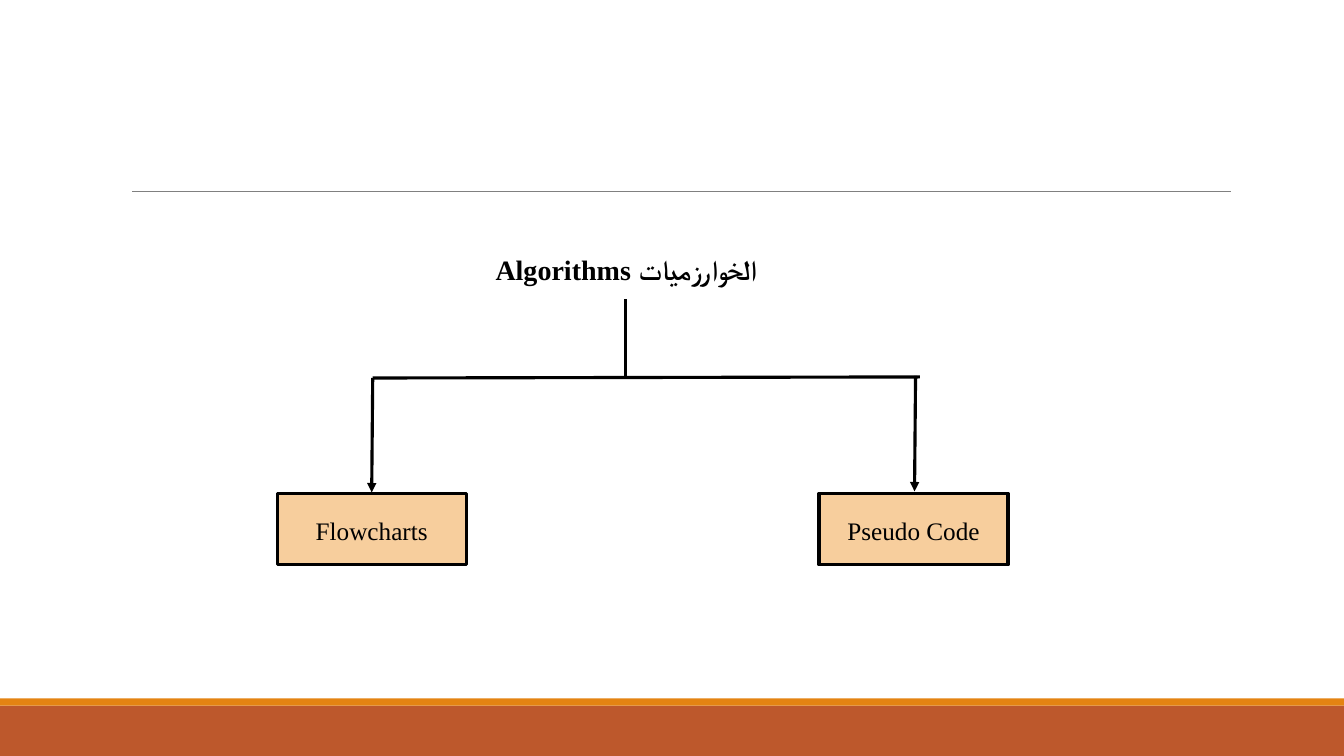
"""Build a slide with a tree that splits algorithms into flowcharts and pseudo code."""
import dataclasses

import lxml.etree
import pptx
import pptx.dml.color
import pptx.enum.shapes
import pptx.enum.text
import pptx.oxml.ns
import pptx.util

EMU_PER_PX = 9525
SLIDE_WIDTH, SLIDE_HEIGHT = 1280, 720
BLACK = "000000"
SERIF = "Times New Roman"


@dataclasses.dataclass(frozen=True)
class Box:
    left: int
    top: int
    width: int
    height: int
    fill: str
    line: str = ""
    text: str = ""


@dataclasses.dataclass(frozen=True)
class Line:
    start: tuple[int, int]
    end: tuple[int, int]
    color: str = BLACK
    weight: float = 2.25
    arrow: bool = False


BARS = [
    Box(0, 672, SLIDE_WIDTH, 48, "BD582C"),
    Box(0, 665, SLIDE_WIDTH, 7, "E48312"),
]
NODES = [
    Box(left, 470, 180, 68, "F7CE9D", BLACK, label)
    for left, label in ((780, "Pseudo Code"), (264, "Flowcharts"))
]
LINES = [
    Line((126, 182), (1172, 182), "808080", 0.5),
    Line((355, 360), (876, 359)),
    Line((872, 358), (871, 468), arrow=True),
    Line((355, 360), (354, 469), arrow=True),
    Line((596, 285), (596, 361)),
]


def px(length: int) -> pptx.util.Emu:
    return pptx.util.Emu(length * EMU_PER_PX)


def rgb(color: str) -> pptx.dml.color.RGBColor:
    return pptx.dml.color.RGBColor.from_string(color)


def format_para(para, rtl: bool = False) -> None:
    para.alignment = pptx.enum.text.PP_ALIGN.CENTER
    para.line_spacing = 1.07
    para.space_after = pptx.util.Pt(8)
    if rtl:
        para._p.get_or_add_pPr().set("rtl", "1")


def add_text(para, text: str, *, size: int, font: str = SERIF,
             color: str = BLACK, bold: bool = False) -> None:
    span = para.add_run()
    span.text = text
    span.font.size = pptx.util.Pt(size)
    span.font.name = font
    span.font.bold = bold
    span.font.color.rgb = rgb(color)


def add_box(page, box: Box) -> None:
    shape = page.shapes.add_shape(
        pptx.enum.shapes.MSO_SHAPE.RECTANGLE,
        px(box.left), px(box.top), px(box.width), px(box.height))
    shape.shadow.inherit = False
    shape.fill.solid()
    shape.fill.fore_color.rgb = rgb(box.fill)
    if box.line:
        shape.line.color.rgb = rgb(box.line)
        shape.line.width = pptx.util.Pt(2.25)
    else:
        shape.line.fill.background()
    if box.text:
        shape.text_frame.word_wrap = True
        shape.text_frame.vertical_anchor = pptx.enum.text.MSO_ANCHOR.MIDDLE
        para = shape.text_frame.paragraphs[0]
        format_para(para)
        add_text(para, box.text, size=18)


def add_line(page, line: Line) -> None:
    connector = page.shapes.add_connector(
        pptx.enum.shapes.MSO_CONNECTOR.STRAIGHT,
        *map(px, line.start), *map(px, line.end))
    connector.line.color.rgb = rgb(line.color)
    connector.line.width = pptx.util.Pt(line.weight)
    if line.arrow:
        lxml.etree.SubElement(connector.line._get_or_add_ln(),
                              pptx.oxml.ns.qn("a:tailEnd"), type="triangle")
    lxml.etree.SubElement(connector._element.spPr, pptx.oxml.ns.qn("a:effectLst"))


def fill_title(title) -> None:
    title.left, title.top, title.width, title.height = map(px, (425, 233, 343, 42))
    frame = title.text_frame
    frame.word_wrap = True
    frame.auto_size = pptx.enum.text.MSO_AUTO_SIZE.SHAPE_TO_FIT_TEXT
    frame.vertical_anchor = pptx.enum.text.MSO_ANCHOR.TOP
    para = frame.paragraphs[0]
    format_para(para, rtl=True)
    add_text(para, "الخوارزميات ", size=20, font="Calibri", bold=True)
    add_text(para, "Algorithms", size=20, bold=True)


def main() -> None:
    deck = pptx.Presentation()
    deck.slide_width, deck.slide_height = px(SLIDE_WIDTH), px(SLIDE_HEIGHT)
    page = deck.slides.add_slide(deck.slide_layouts.get_by_name("Title Only"))
    for bar in BARS:
        add_box(page, bar)
    for line in LINES:
        add_line(page, line)
    for node in NODES:
        add_box(page, node)
    fill_title(page.shapes.title)
    deck.save("out.pptx")


if __name__ == "__main__":
    main()
